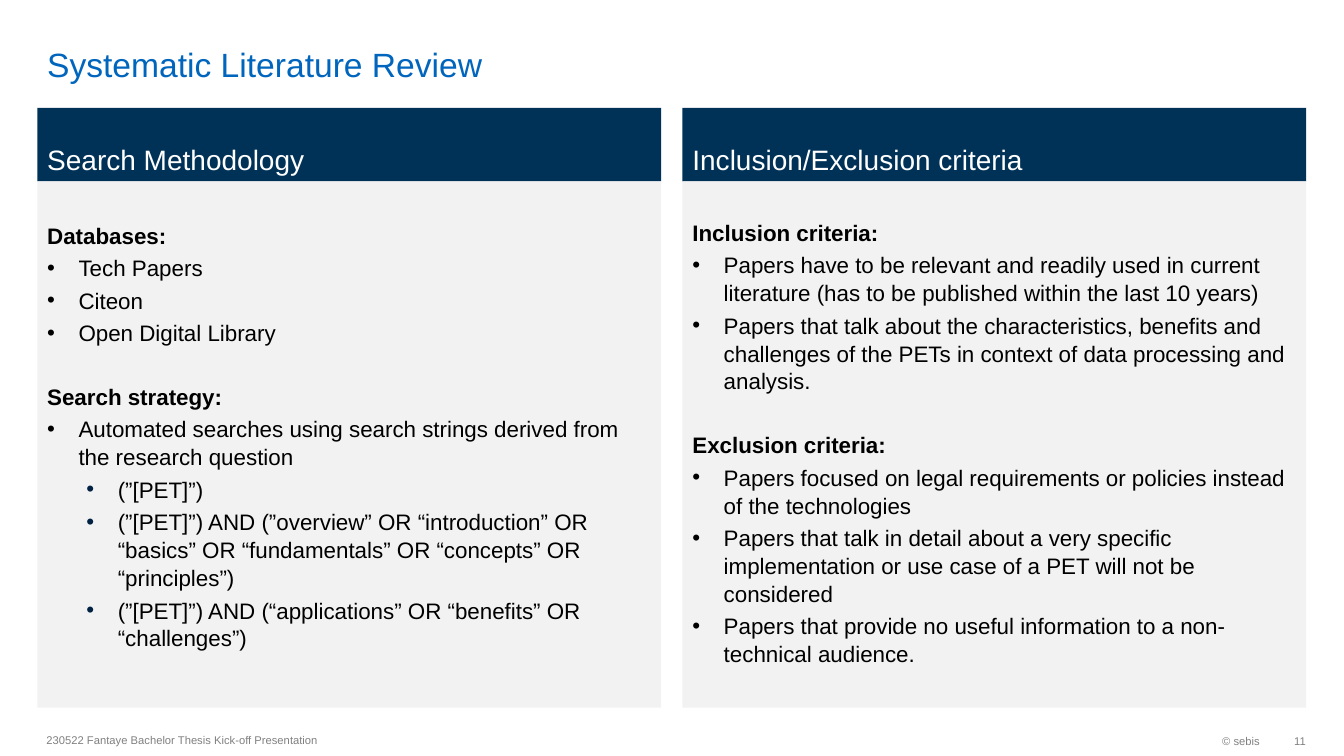
from lxml.etree import SubElement
from pptx import Presentation
from pptx.dml.color import RGBColor
from pptx.enum.shapes import MSO_SHAPE
from pptx.enum.text import MSO_ANCHOR, PP_ALIGN
from pptx.oxml.ns import qn
from pptx.util import Cm, Pt

COLORS = {
    "navy": "003258",
    "pale": "F2F2F2",
    "blue": "0065BD",
    "gray": "808080",
    "black": "000000",
    "white": "FFFFFF",
    "mark": "002143",
}
HANG = 0.79
INDENTS = {"item": HANG, "sub": 1.78}
MARKS = {"item": "black", "sub": "mark"}

SEARCH = [
    ("head", "Databases:"),
    ("item", "Tech Papers"),
    ("item", "Citeon"),
    ("item", "Open Digital Library"),
    ("head", "Search strategy:"),
    ("item", "Automated searches using search strings derived from the research question"),
    ("sub", "(”[PET]”)"),
    ("sub", "(”[PET]”) AND (”overview” OR “introduction” OR “basics” OR “fundamentals” OR “concepts” OR “principles”)"),
    ("sub", "(”[PET]”) AND (“applications” OR “benefits” OR “challenges”)"),
]
CRITERIA = [
    ("head", "Inclusion criteria:"),
    ("item", "Papers have to be relevant and readily used in current literature (has to be published within the last 10 years)"),
    ("item", "Papers that talk about the characteristics, benefits and challenges of the PETs in context of data processing and analysis."),
    ("head", "Exclusion criteria:"),
    ("item", "Papers focused on legal requirements or policies instead of the technologies"),
    ("item", "Papers that talk in detail about a very specific implementation or use case of a PET will not be considered"),
    ("item", "Papers that provide no useful information to a non-technical audience."),
]


def color(name):
    return RGBColor.from_string(COLORS[name])


def add_run(para, text, size, tone, bold=False):
    run = para.add_run()
    run.text = text
    run.font.name = "Arial"
    run.font.size = Pt(size)
    run.font.bold = bold
    run.font.color.rgb = color(tone)


def add_block(slide, box, fill):
    shape = slide.shapes.add_shape(MSO_SHAPE.RECTANGLE, *map(Cm, box))
    shape.shadow.inherit = False
    shape.fill.solid()
    shape.fill.fore_color.rgb = color(fill)
    shape.line.fill.background()
    shape.text_frame.word_wrap = True
    return shape.text_frame


def add_label(slide, box, text, size, tone, align=PP_ALIGN.LEFT,
              anchor=MSO_ANCHOR.MIDDLE, right=0.25):
    frame = slide.shapes.add_textbox(*map(Cm, box)).text_frame
    frame.word_wrap = True
    frame.vertical_anchor = anchor
    frame.margin_top = frame.margin_bottom = 0
    frame.margin_right = Cm(right)
    para = frame.paragraphs[0]
    para.alignment = align
    add_run(para, text, size, tone)


def add_bullet(para, kind):
    props = para._p.get_or_add_pPr()
    props.set("marL", str(Cm(INDENTS[kind])))
    props.set("indent", str(-Cm(HANG)))
    tint = SubElement(props, qn("a:buClr"))
    SubElement(tint, qn("a:srgbClr"), val=COLORS[MARKS[kind]])
    SubElement(props, qn("a:buFont"), typeface="Arial")
    SubElement(props, qn("a:buChar"), char="•")


def add_panel(slide, left, title, lines, inset):
    header = add_block(slide, (left, 2.72, 15.72, 1.85), "navy")
    header.vertical_anchor = MSO_ANCHOR.BOTTOM
    header.paragraphs[0].alignment = PP_ALIGN.LEFT
    add_run(header.paragraphs[0], title, 20, "white")

    body = add_block(slide, (left, 4.57, 15.72, 13.26), "pale")
    body.vertical_anchor = MSO_ANCHOR.TOP
    body.margin_top = Cm(inset)
    for index, (kind, text) in enumerate(lines):
        para = body.add_paragraph() if index else body.paragraphs[0]
        if kind in INDENTS:
            add_bullet(para, kind)
        if kind == "sub":
            para.level = 1
        para.alignment = PP_ALIGN.LEFT
        para.line_spacing = 1.04
        if index:
            para.space_before = Pt(25.6 if kind == "head" else 3.2)
        add_run(para, text, 16, "black", kind == "head")


def main():
    deck = Presentation()
    deck.slide_width, deck.slide_height = Cm(33.87), Cm(19.05)
    slide = deck.slides.add_slide(deck.slide_layouts[6])
    add_panel(slide, 0.94, "Search Methodology", SEARCH, 1)
    add_panel(slide, 17.2, "Inclusion/Exclusion criteria", CRITERIA, 0.92)
    add_label(slide, (0.94, 0.13, 29.41, 2), "Systematic Literature Review",
              24, "blue", anchor=MSO_ANCHOR.BOTTOM)
    add_label(slide, (26.06, 18.26, 5.94, 0.81), "© sebis", 8, "gray", PP_ALIGN.RIGHT)
    add_label(slide, (32, 18.26, 0.91, 0.81), "11", 8, "gray", PP_ALIGN.RIGHT, right=0)
    add_label(slide, (0.92, 18.24, 16, 0.81),
              "230522 Fantaye Bachelor Thesis Kick-off Presentation", 8, "gray")
    deck.save("out.pptx")


if __name__ == "__main__":
    main()
